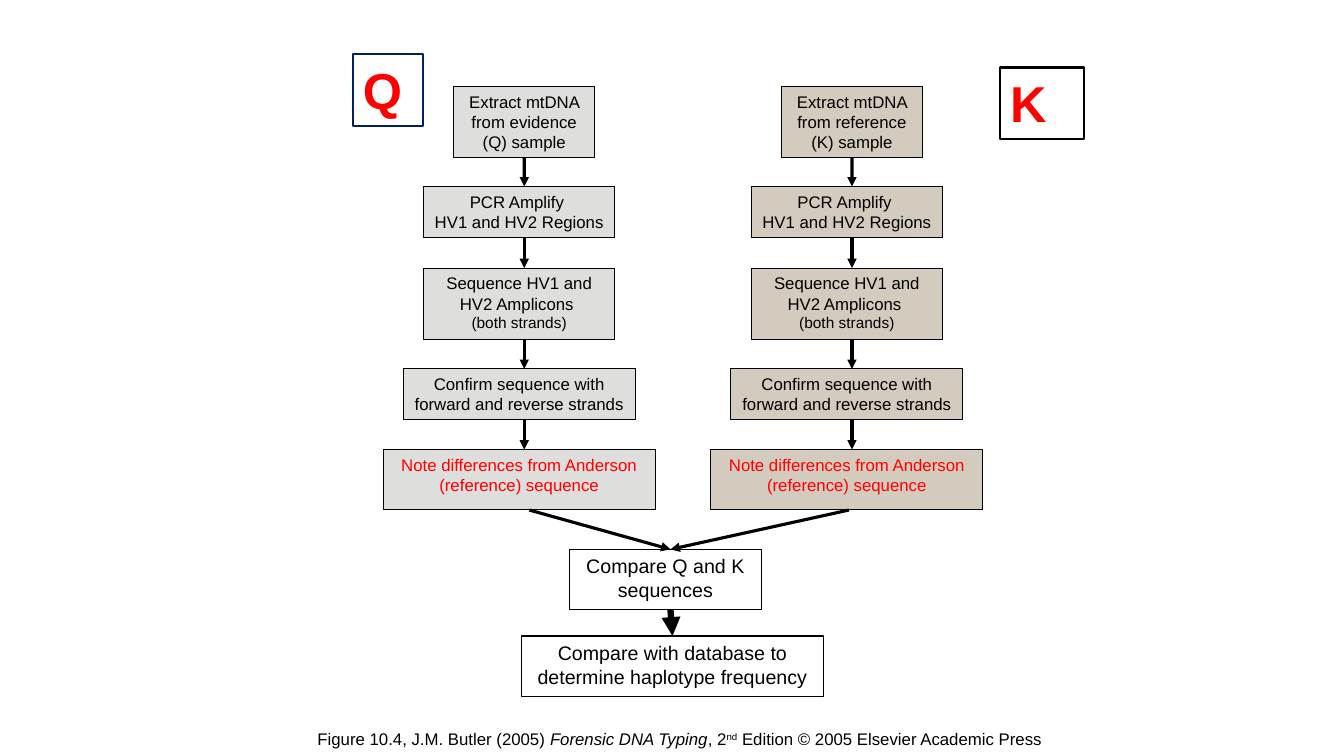
from lxml import etree
from pptx import Presentation
from pptx.dml.color import RGBColor
from pptx.enum.shapes import MSO_CONNECTOR, MSO_SHAPE
from pptx.enum.text import MSO_ANCHOR, PP_ALIGN
from pptx.oxml.ns import qn
from pptx.util import Inches, Pt

BLACK = RGBColor(0x00, 0x00, 0x00)
WHITE = RGBColor(0xFF, 0xFF, 0xFF)
RED = RGBColor(0xFF, 0x00, 0x00)
NAVY = RGBColor(0x00, 0x20, 0x60)
GREY = RGBColor(0xDE, 0xDE, 0xDC)
TAN = RGBColor(0xD4, 0xCB, 0xBF)
FONT = "Arial"
BOTTOM, TOP = 2, 0

BRANCHES = [
    {"sample": "evidence (Q)", "left": 3.8, "fill": GREY},
    {"sample": "reference (K)", "left": 7.05, "fill": TAN},
]
STEPS = [
    (0.7, 0.86, 1.4, 0.7, [("Extract mtDNA from {sample} sample", 12)], BLACK),
    (0.4, 1.85, 1.9, 0.51, [("PCR Amplify ", 12), ("HV1 and HV2 Regions", 12)], BLACK),
    (0.4, 2.66, 1.9, 0.71, [("Sequence HV1 and HV2 Amplicons ", 12), ("(both strands)", 11)], BLACK),
    (0.2, 3.66, 2.3, 0.5, [("Confirm sequence with forward and reverse strands", 12)], BLACK),
    (0, 4.46, 2.7, 0.6, [("Note differences from Anderson (reference) sequence", 12)], RED),
]
BRANCH_ARROW_OFFSET = 1.4
COMPARE_BOX = (5.65, 5.45, 1.9, 0.6)
DATABASE_BOX = (5.17, 6.31, 3, 0.6)
MERGE_POINT = (6.65, 5.45)
MERGE_STARTS = [(5.25, 5.06), (8.42, 5.06)]
BADGES = [
    ("Q", (3.5, 0.54, 0.7, 0.71), NAVY),
    ("K", (9.92, 0.67, 0.83, 0.71), BLACK),
]
CAPTION = [
    ("Figure 10.4, J.M. Butler (2005) ", False, False),
    ("Forensic DNA Typing", True, False),
    (", 2", False, False),
    ("nd", False, True),
    (" Edition © 2005 Elsevier Academic Press", False, False),
]


def add_run(paragraph, text, size, color):
    run = paragraph.add_run()
    run.text = text
    run.font.name = FONT
    run.font.size = Pt(size)
    run.font.color.rgb = color
    return run


def add_box(slide, position, lines, fill=None, color=BLACK, outline=BLACK,
            width=0.75, alignment=PP_ALIGN.CENTER, bold=False):
    shape = slide.shapes.add_shape(MSO_SHAPE.RECTANGLE, *map(Inches, position))
    shape.shadow.inherit = False
    if fill is None:
        shape.fill.background()
    else:
        shape.fill.solid()
        shape.fill.fore_color.rgb = fill
    shape.line.color.rgb = outline
    shape.line.width = Pt(width)
    frame = shape.text_frame
    frame.word_wrap = True
    frame.vertical_anchor = MSO_ANCHOR.TOP
    for index, (text, size) in enumerate(lines):
        paragraph = frame.add_paragraph() if index else frame.paragraphs[0]
        paragraph.alignment = alignment
        add_run(paragraph, text, size, color).font.bold = bold
    return shape


def add_arrow(slide, start, end, width=2.25):
    arrow = slide.shapes.add_connector(
        MSO_CONNECTOR.STRAIGHT, *map(Inches, start + end))
    arrow.line.color.rgb = BLACK
    arrow.line.width = Pt(width)
    etree.SubElement(arrow.line._get_or_add_ln(), qn("a:tailEnd"), type="triangle")
    etree.SubElement(arrow._element.spPr, qn("a:effectLst"))
    return arrow


def add_branch(slide, branch):
    arrow_x = branch["left"] + BRANCH_ARROW_OFFSET
    previous = None
    for offset, top, width, height, lines, color in STEPS:
        texts = [(text.format(sample=branch["sample"]), size) for text, size in lines]
        position = (branch["left"] + offset, top, width, height)
        box = add_box(slide, position, texts, branch["fill"], color)
        if previous:
            previous_box, previous_bottom = previous
            arrow = add_arrow(slide, (arrow_x, previous_bottom), (arrow_x, top))
            middle = previous_box.left + previous_box.width / 2
            if abs(middle - Inches(arrow_x)) < Inches(0.01):
                arrow.begin_connect(previous_box, BOTTOM)
        previous = box, top + height


def add_caption(slide):
    caption = slide.shapes.add_textbox(*map(Inches, (3.05, 7.18, 7.42, 0.3)))
    caption.text_frame.word_wrap = False
    paragraph = caption.text_frame.paragraphs[0]
    for text, italic, superscript in CAPTION:
        run = add_run(paragraph, text, 12, BLACK)
        run.font.italic = italic
        if superscript:
            run.font._element.set("baseline", "30000")


def main():
    """Build the flowchart comparing mtDNA from Q and K samples."""
    presentation = Presentation()
    presentation.slide_width = Inches(13.33)
    presentation.slide_height = Inches(7.5)
    slide = presentation.slides.add_slide(presentation.slide_layouts[6])

    for branch in BRANCHES:
        add_branch(slide, branch)
    database = add_box(slide, DATABASE_BOX, [
        ("Compare with database to determine haplotype frequency", 14)], WHITE)
    add_box(slide, COMPARE_BOX, [("Compare Q and K sequences", 14)], WHITE)
    for start in MERGE_STARTS:
        add_arrow(slide, start, MERGE_POINT)
    final_arrow = add_arrow(slide, (6.65, 6.05), (6.67, 6.31), 4.5)
    final_arrow.end_connect(database, TOP)

    for letter, position, outline in BADGES:
        add_box(slide, position, [(letter, 36)], None, RED, outline, 1.5,
                PP_ALIGN.LEFT, True)
    add_caption(slide)
    presentation.save("out.pptx")


if __name__ == "__main__":
    main()
